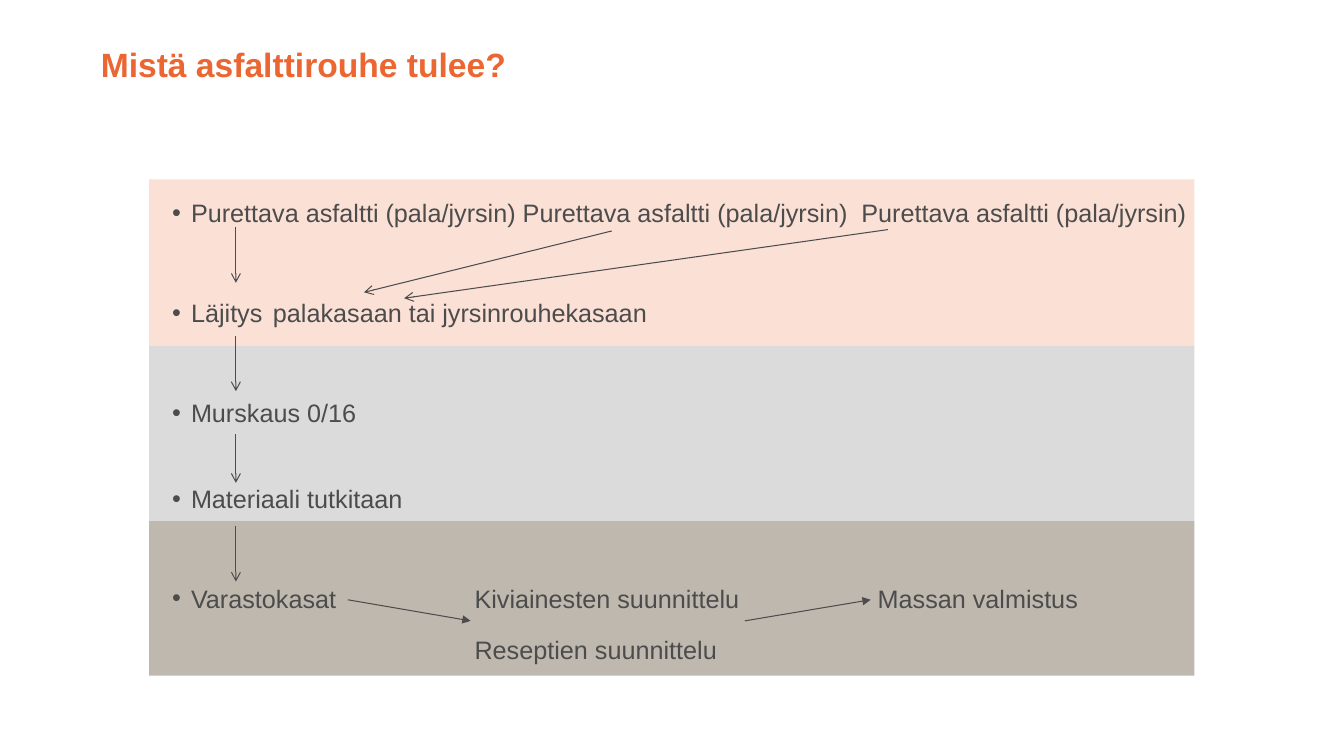
"""Build the slide on where reclaimed asphalt comes from."""
from lxml.etree import SubElement
from pptx import Presentation
from pptx.dml.color import RGBColor
from pptx.enum.shapes import MSO_CONNECTOR as CONNECTOR, MSO_SHAPE as SHAPE
from pptx.oxml.ns import qn
from pptx.util import Pt

ORANGE = RGBColor(0xEB, 0x66, 0x31)
PEACH = RGBColor(0xFB, 0xE0, 0xD6)
SILVER = RGBColor(0xDB, 0xDB, 0xDB)
TAUPE = RGBColor(0xBF, 0xB8, 0xAF)
CHARCOAL = RGBColor(0x4C, 0x4C, 0x4C)

BANDS = [(119, PEACH), (125, SILVER), (110.4, TAUPE)]
STEPS = [
    ("Purettava asfaltti (pala/jyrsin) Purettava asfaltti (pala/jyrsin)"
     "  Purettava asfaltti (pala/jyrsin)", 0, True),
    ("Läjitys\tpalakasaan tai jyrsinrouhekasaan", 50, True),
    ("Murskaus 0/16", 49.5, True),
    ("Materiaali tutkitaan", 40, True),
    ("Varastokasat\t\tKiviainesten suunnittelu\t\tMassan valmistus", 49.5, True),
    ("\t\t\tReseptien suunnittelu", 15, False),
]
STEP_X = 168.5
STEP_ARROWS = [(162, 202), (239.8, 279.4), (310.3, 344.9), (375.8, 415.4)]
SOURCE_ARROWS = [(437, 165, 260, 208.8), (634.3, 164, 288.7, 213)]
DESIGN_ARROWS = [(248.4, 428.4, 336.2, 443.5), (532, 443.5, 622, 428.4)]


def add_band(slide, top, height, color):
    """Add one full-width process band."""
    band = slide.shapes.add_shape(
        SHAPE.RECTANGLE, Pt(106.6), Pt(top), Pt(746.6), Pt(height))
    band.shadow.inherit = False
    band.fill.solid()
    band.fill.fore_color.rgb = color
    band.line.fill.background()


def add_frame(slide, left, top, width, height):
    """Add a wrapping text box and return its text frame."""
    frame = slide.shapes.add_textbox(
        Pt(left), Pt(top), Pt(width), Pt(height)).text_frame
    frame.word_wrap = True
    return frame


def style_font(paragraph, size, color, bold=False):
    """Set the font of a whole paragraph."""
    font = paragraph.font
    font.name, font.size, font.bold = "Arial", Pt(size), bold
    font.color.rgb = color


def add_title(slide, wording):
    """Add the slide heading."""
    frame = add_frame(slide, 72, 28, 816, 90)
    frame.margin_left = 0
    heading = frame.paragraphs[0]
    heading.text = wording
    style_font(heading, 24, ORANGE, True)


def add_steps(slide):
    """Add the process steps as one spaced list."""
    frame = add_frame(slide, 115.9, 137.5, 756, 345.6)
    for index, (wording, gap, bulleted) in enumerate(STEPS):
        step = frame.add_paragraph() if index else frame.paragraphs[0]
        step.text = wording
        properties = step._p.get_or_add_pPr()
        properties.set("defTabSz", str(Pt(72)))
        if bulleted:
            properties.set("marL", str(Pt(13.5)))
            properties.set("indent", str(Pt(-13.5)))
            SubElement(properties, qn("a:buFont"), typeface="Arial")
            SubElement(properties, qn("a:buChar"), char="•")
        if gap:
            step.space_before = Pt(gap)
        style_font(step, 18, CHARCOAL)


def add_arrow(slide, start_x, start_y, end_x, end_y, head="arrow"):
    """Add a thin arrow pointing at its end point."""
    arrow = slide.shapes.add_connector(
        CONNECTOR.STRAIGHT, Pt(start_x), Pt(start_y), Pt(end_x), Pt(end_y))
    arrow.line.color.rgb = CHARCOAL
    arrow.line.width = Pt(0.75)
    SubElement(arrow.line._get_or_add_ln(), qn("a:tailEnd"), type=head)
    SubElement(arrow._element.spPr, qn("a:effectLst"))


def main():
    """Compose and save the slide."""
    deck = Presentation()
    deck.slide_width, deck.slide_height = Pt(960), Pt(540)
    slide = deck.slides.add_slide(deck.slide_layouts[6])
    add_title(slide, "Mistä asfalttirouhe tulee?")
    top = 128.2
    for height, color in BANDS:
        add_band(slide, top, height, color)
        top += height
    add_steps(slide)
    for start_y, end_y in STEP_ARROWS:
        add_arrow(slide, STEP_X, start_y, STEP_X, end_y)
    for ends in SOURCE_ARROWS:
        add_arrow(slide, *ends)
    for ends in DESIGN_ARROWS:
        add_arrow(slide, *ends, head="triangle")
    deck.save("out.pptx")


if __name__ == "__main__":
    main()
